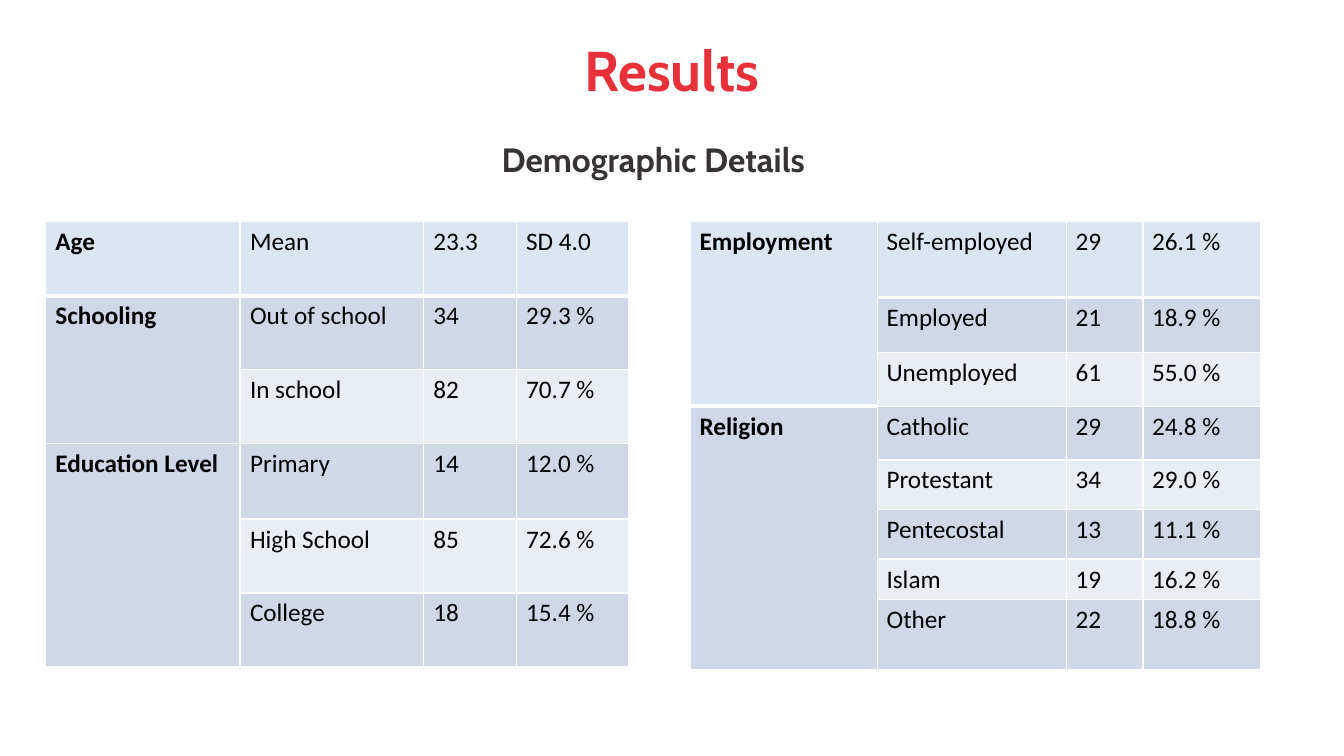
from lxml.etree import SubElement
from pptx import Presentation
from pptx.dml.color import RGBColor
from pptx.enum.text import MSO_ANCHOR, MSO_AUTO_SIZE, PP_ALIGN
from pptx.oxml import parse_xml
from pptx.oxml.ns import nsdecls, qn
from pptx.util import Pt

THEME = {
    "title": {"name": "Cabin", "size": Pt(40), "bold": True, "color": "E8303B"},
    "sub": {"name": "Cabin", "size": Pt(24), "bold": True, "color": "383333"},
    "label": {"name": "Calibri", "size": Pt(18), "bold": True, "color": "000000"},
    "value": {"name": "Calibri", "size": Pt(18), "bold": False, "color": "000000"},
    "fills": {"head": "DCE6F2", "odd": "D0D8E8", "even": "E9EDF4"},
    "rule": "FFFFFF",
}

TABLES = [
    {
        "at": (32.4, 158.4), "pad": 7.2,
        "cols": [139, 131, 66.3, 80.6],
        "rows": [52.8, 52.8, 52.8, 54, 52.8, 52.8],
        "groups": [
            ("Age", [("Mean", "23.3", "SD 4.0")]),
            ("Schooling", [("Out of school", "34", "29.3 %"),
                           ("In school", "82", "70.7 %")]),
            ("Education Level", [("Primary", "14", "12.0 %"),
                                 ("High School", "85", "72.6 %"),
                                 ("College", "18", "15.4 %")]),
        ],
    },
    {
        "at": (493.2, 158.4), "pad": 6.5,
        "cols": [133.6, 135, 54.6, 84.3],
        "rows": [54, 39.4, 38.4, 38.4, 35.4, 35.4, 29.2, 49.6],
        "groups": [
            ("Employment", [("Self-employed", "29", "26.1 %"),
                            ("Employed", "21", "18.9 %"),
                            ("Unemployed", "61", "55.0 %")]),
            ("Religion", [("Catholic", "29", "24.8 %"),
                          ("Protestant", "34", "29.0 %"),
                          ("Pentecostal", "13", "11.1 %"),
                          ("Islam", "19", "16.2 %"),
                          ("Other", "22", "18.8 %")]),
        ],
    },
]


def style(font, look):
    for key, value in THEME[look].items():
        if key == "color":
            font.color.rgb = RGBColor.from_string(value)
        else:
            setattr(font, key, value)


def paint(cell, color, base):
    props = cell._tc.get_or_add_tcPr()
    for side in "LRTB":
        width = Pt(base if side == "B" else 1)
        props.append(parse_xml(
            f'<a:ln{side} {nsdecls("a")} w="{width}"><a:solidFill>'
            f'<a:srgbClr val="{THEME["rule"]}"/></a:solidFill></a:ln{side}>'))
    cell.fill.solid()
    cell.fill.fore_color.rgb = RGBColor.from_string(color)


deck = Presentation()
deck.slide_width, deck.slide_height = Pt(960), Pt(540)
slide = deck.slides.add_slide(deck.slide_layouts[1])

heads = [
    (slide.shapes.title, "Results", "title", (59, 21.6, 841.7, 56.2), MSO_ANCHOR.MIDDLE),
    (slide.placeholders[1], "Demographic Details", "sub", (32.4, 87.1, 868.3, 44.6), MSO_ANCHOR.BOTTOM),
]
for holder, text, look, box, anchor in heads:
    for name, value in zip(("left", "top", "width", "height"), box):
        setattr(holder, name, Pt(value))
    frame = holder.text_frame
    frame.text = text
    frame.auto_size = MSO_AUTO_SIZE.NONE
    frame.vertical_anchor = anchor
    para = frame.paragraphs[0]
    props = para._p.get_or_add_pPr()
    props.set("marL", "0")
    props.set("indent", "0")
    SubElement(props, qn("a:buNone"))
    para.alignment = PP_ALIGN.CENTER
    para.space_before = Pt(0)
    style(para.runs[0].font, look)

for data in TABLES:
    cols, rows = data["cols"], data["rows"]
    left, top = data["at"]
    grid = slide.shapes.add_table(
        len(rows), len(cols), Pt(left), Pt(top), Pt(sum(cols)), Pt(sum(rows))).table
    grid.first_row = grid.horz_banding = False
    for col, width in zip(grid.columns, cols):
        col.width = Pt(width)
    for row, height in zip(grid.rows, rows):
        row.height = Pt(height)

    start = 0
    for label, lines in data["groups"]:
        for step, line in enumerate(lines):
            index = start + step
            for col, text in enumerate((label if step == 0 else "", *line)):
                cell = grid.cell(index, col)
                band = start if col == 0 else index
                shade = "head" if band == 0 else "odd" if band % 2 else "even"
                paint(cell, THEME["fills"][shade], 3 if band == 0 else 1)
                cell.margin_left = cell.margin_right = Pt(data["pad"])
                cell.margin_top = cell.margin_bottom = Pt(3.6)
                para = cell.text_frame.paragraphs[0]
                if text:
                    para.text = text
                    style(para.runs[0].font, "value" if col else "label")
        if len(lines) > 1:
            grid.cell(start, 0).merge(grid.cell(start + len(lines) - 1, 0))
        start += len(lines)

deck.save("out.pptx")
